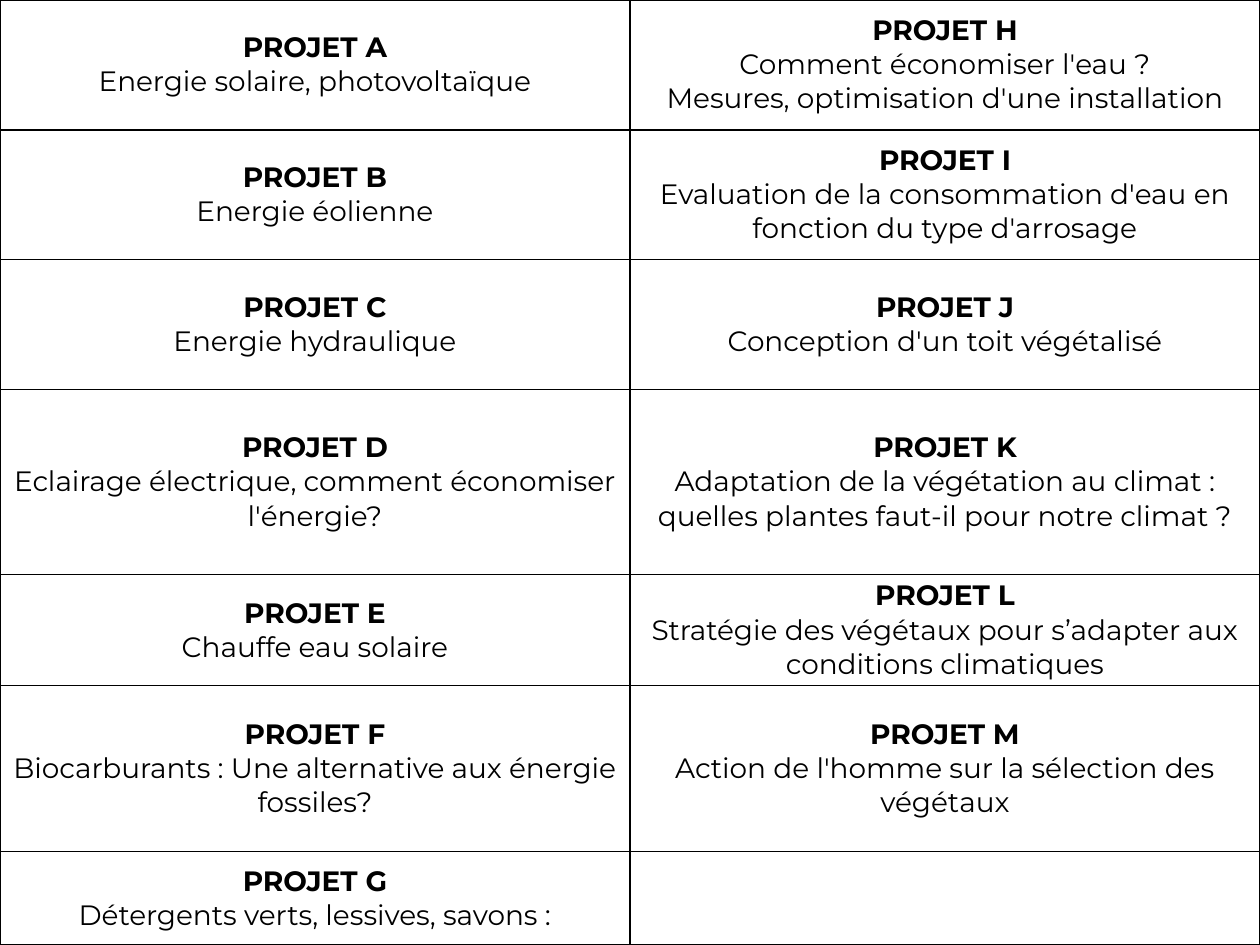
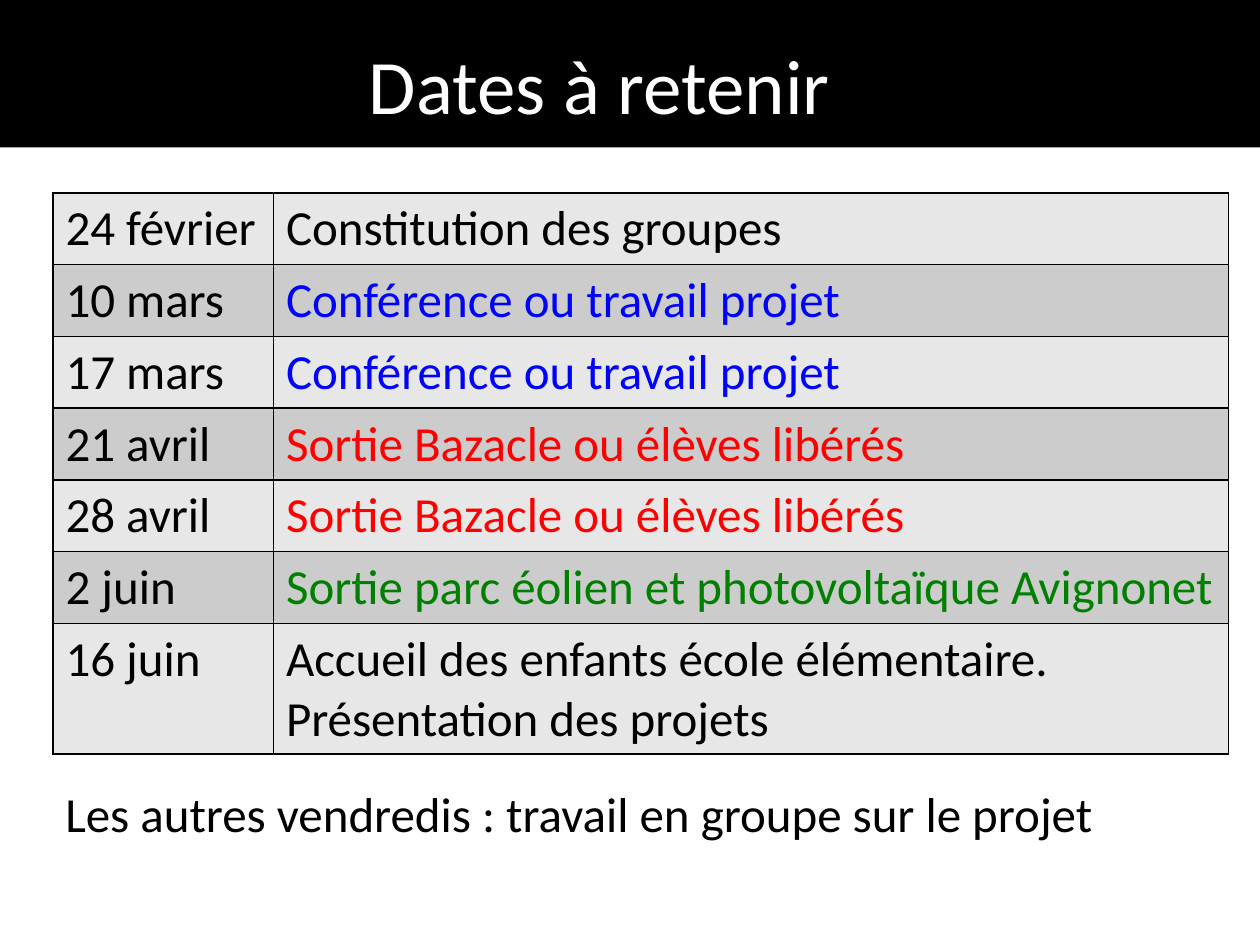
import pptx
import pptx.dml.color
import pptx.enum.shapes
import pptx.enum.text
import pptx.oxml
import pptx.oxml.ns
import pptx.util

PROJECTS = [
    ("A", "Energie solaire, photovoltaïque"),
    ("B", "Energie éolienne"),
    ("C", "Energie hydraulique"),
    ("D", "Eclairage électrique, comment économiser l'énergie?"),
    ("E", "Chauffe eau solaire"),
    ("F", "Biocarburants : Une alternative aux énergie fossiles?"),
    ("G", "Détergents verts, lessives, savons :"),
    ("H", "Comment économiser l'eau ?", "Mesures, optimisation d'une installation"),
    ("I", "Evaluation de la consommation d'eau en fonction du type d'arrosage"),
    ("J", "Conception d'un toit végétalisé"),
    ("K", "Adaptation de la végétation au climat : quelles plantes faut-il pour notre climat ?"),
    ("L", "Stratégie des végétaux pour s’adapter aux conditions climatiques"),
    ("M", "Action de l'homme sur la sélection des végétaux"),
]
PROJECT_ROWS = [1.03, 1.03, 1.03, 1.47, 0.88, 1.32, 0.74]

BLACK, WHITE, BLUE, RED, GREEN = "000000", "FFFFFF", "0000FF", "FF0000", "008000"
BANDS = ["E7E7E7", "CCCCCC"]
DATES = [
    ("24 février", "Constitution des groupes", BLACK),
    ("10 mars", "Conférence ou travail projet", BLUE),
    ("17 mars", "Conférence ou travail projet", BLUE),
    ("21 avril", "Sortie Bazacle ou élèves libérés", RED),
    ("28 avril", "Sortie Bazacle ou élèves libérés", RED),
    ("2 juin", "Sortie parc éolien et photovoltaïque Avignonet", GREEN),
    ("16 juin", "Accueil des enfants école élémentaire. Présentation des projets", BLACK),
]
DATES_TITLE = "Dates à retenir"
OTHER_FRIDAYS = "Les autres vendredis : travail en groupe sur le projet"

WIDTH, HEIGHT = 10, 7.5
MARGIN = 0.42
inches = pptx.util.Inches


def rgb(value):
    return pptx.dml.color.RGBColor.from_string(value)


def write(frame, *lines, size=28, font="Calibri", color=BLACK, align=None, bold_first=False):
    """Put one paragraph per line in a text frame."""
    for number, line in enumerate(lines):
        paragraph = frame.add_paragraph() if number else frame.paragraphs[0]
        paragraph.alignment = align
        run = paragraph.add_run()
        run.text = line
        run.font.size = pptx.util.Pt(size)
        run.font.name = font
        run.font.bold = bold_first and number == 0
        run.font.color.rgb = rgb(color)


def add_text(slide, text, left, top, width, height, **style):
    frame = slide.shapes.add_textbox(*map(inches, (left, top, width, height))).text_frame
    frame.word_wrap = True
    frame.auto_size = pptx.enum.text.MSO_AUTO_SIZE.SHAPE_TO_FIT_TEXT
    write(frame, text, **style)


def add_borders(cell):
    properties = cell._tc.get_or_add_tcPr()
    for side in "LRTB":
        properties.append(pptx.oxml.parse_xml(
            f'<a:ln{side} {pptx.oxml.ns.nsdecls("a")} w="12700"><a:solidFill>'
            f'<a:srgbClr val="{BLACK}"/></a:solidFill></a:ln{side}>'))


def add_grid(slide, left, top, columns, rows, fills=()):
    """Add a ruled table whose rows cycle through the fills, if any."""
    table = slide.shapes.add_table(
        len(rows), len(columns),
        *map(inches, (left, top, sum(columns), sum(rows)))).table
    table.first_row = table.horz_banding = False
    for column, width in zip(table.columns, columns):
        column.width = inches(width)
    for number, (row, height) in enumerate(zip(table.rows, rows)):
        row.height = inches(height)
        for cell in row.cells:
            add_borders(cell)
            if fills:
                cell.fill.solid()
                cell.fill.fore_color.rgb = rgb(fills[number % len(fills)])
            else:
                cell.fill.background()
    return table


def build_projects(slide):
    grid = add_grid(slide, 0, 0, [WIDTH / 2] * 2, PROJECT_ROWS)
    for number, (letter, *subject) in enumerate(PROJECTS):
        column, row = divmod(number, len(PROJECT_ROWS))
        cell = grid.cell(row, column)
        cell.margin_left = cell.margin_right = inches(0.04)
        cell.margin_top = cell.margin_bottom = 0
        cell.vertical_anchor = pptx.enum.text.MSO_ANCHOR.MIDDLE
        write(cell.text_frame, f"PROJET {letter}", *subject, size=16, font="Montserrat",
              align=pptx.enum.text.PP_ALIGN.CENTER, bold_first=True)


def build_dates(slide):
    band = slide.shapes.add_shape(pptx.enum.shapes.MSO_SHAPE.RECTANGLE,
                                  0, 0, inches(WIDTH), inches(1.17))
    band.shadow.inherit = False
    band.fill.solid()
    band.fill.fore_color.rgb = rgb(BLACK)
    band.line.fill.background()
    add_text(slide, DATES_TITLE, 2.83, 0.25, 5.42, 0.84, size=44, color=WHITE)

    heights = [0.57] * (len(DATES) - 1) + [1.03]
    calendar = add_grid(slide, MARGIN, 1.53, [1.75, 7.58], heights, BANDS)
    for row, (day, event, color) in enumerate(DATES):
        write(calendar.cell(row, 0).text_frame, day)
        write(calendar.cell(row, 1).text_frame, event, color=color)
    add_text(slide, OTHER_FRIDAYS, MARGIN, 6.17, 8.83, 0.57)


def main():
    deck = pptx.Presentation()
    deck.slide_width, deck.slide_height = inches(WIDTH), inches(HEIGHT)
    for build in (build_projects, build_dates):
        build(deck.slides.add_slide(deck.slide_layouts[6]))
    deck.save("out.pptx")


if __name__ == "__main__":
    main()
